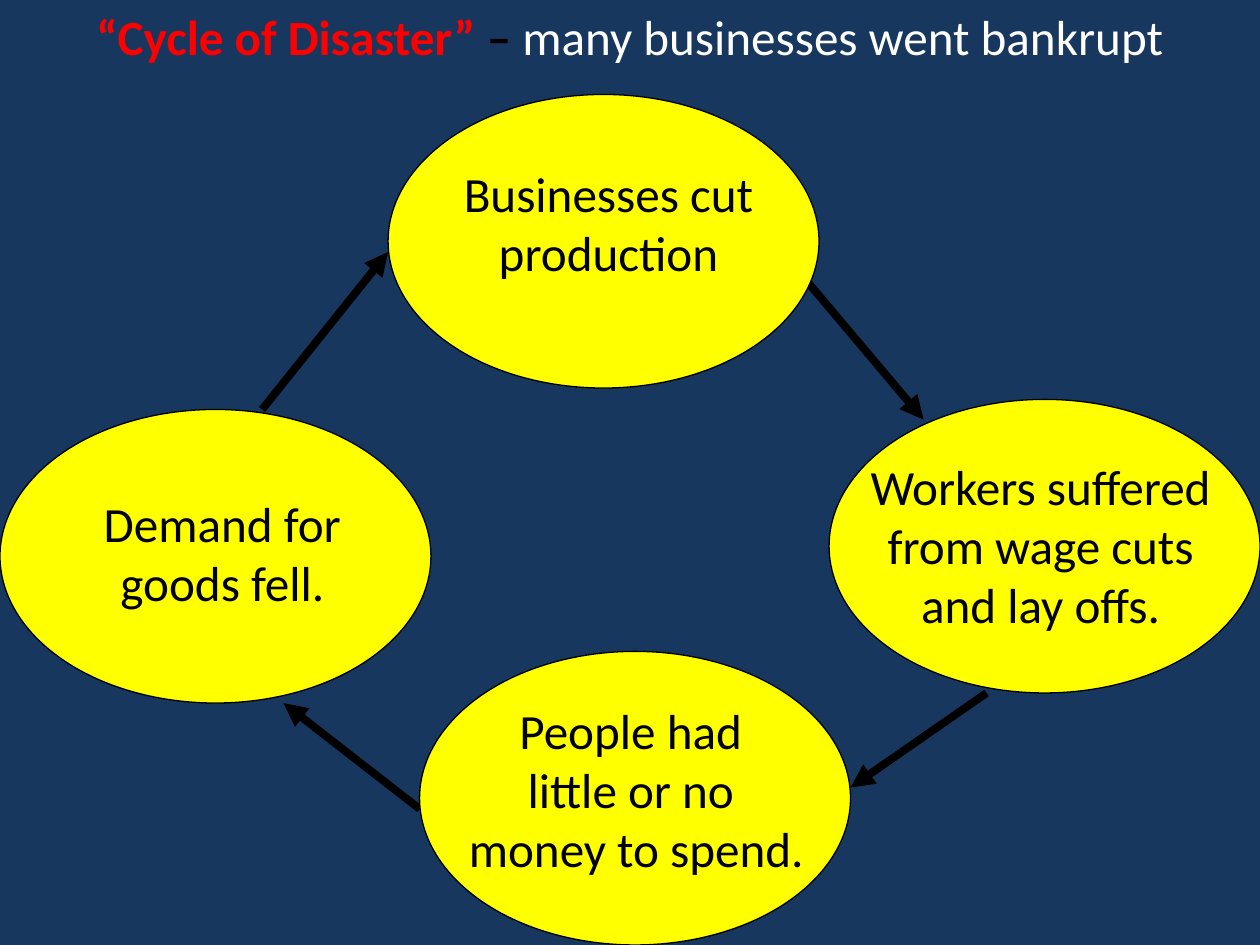
"""Builds a slide showing the cycle of business failure as four linked ovals."""
from pptx import Presentation
from pptx.dml.color import RGBColor
from pptx.enum.shapes import MSO_CONNECTOR as Connector, MSO_SHAPE as Shape
from pptx.enum.text import MSO_ANCHOR as Anchor, MSO_AUTO_SIZE as AutoSize, PP_ALIGN as Align
from pptx.oxml.ns import qn
from pptx.util import Inches, Pt
from lxml.etree import SubElement


def color(value):
    return RGBColor.from_string(value)


class CycleSlide:
    FONT, SIZE = "Calibri", 28.1
    NAVY, YELLOW, BLACK, RED, WHITE = "17375E", "FFFF00", "000000", "FF0000", "FFFFFF"
    OVAL_SIZE = (3.42, 2.33)

    def __init__(self, deck):
        self.slide = deck.slides.add_slide(deck.slide_layouts[5])
        self.slide.background.fill.solid()
        self.slide.background.fill.fore_color.rgb = color(self.NAVY)

    def style_run(self, run, ink, bold=False):
        run.font.name, run.font.size, run.font.bold = self.FONT, Pt(self.SIZE), bold
        run.font.color.rgb = color(ink)

    def style_frame(self, frame):
        frame.word_wrap = True
        frame.auto_size = AutoSize.NONE
        frame.vertical_anchor = Anchor.TOP
        for paragraph in frame.paragraphs:
            paragraph.alignment = Align.CENTER

    def title(self, parts):
        heading = self.slide.shapes.title
        heading.left, heading.top, heading.width, heading.height = map(Inches, (0, 0, 10, 0.57))
        self.style_frame(heading.text_frame)
        for wording, ink, bold in parts:
            run = heading.text_frame.paragraphs[0].add_run()
            run.text = wording
            self.style_run(run, ink, bold)

    def oval(self, left, top):
        stage = self.slide.shapes.add_shape(
            Shape.OVAL, *map(Inches, (left, top, *self.OVAL_SIZE)))
        stage.shadow.inherit = False
        stage.fill.solid()
        stage.fill.fore_color.rgb = color(self.YELLOW)
        stage.line.color.rgb = color(self.BLACK)
        stage.line.width = Pt(0.75)

    def arrow(self, start, end):
        link = self.slide.shapes.add_connector(
            Connector.STRAIGHT, *map(Inches, (*start, *end)))
        link.line.color.rgb = color(self.BLACK)
        link.line.width = Pt(4.5)
        SubElement(link.line._get_or_add_ln(), qn("a:tailEnd"), type="triangle")
        SubElement(link._element.spPr, qn("a:effectLst"))

    def caption(self, box, wording):
        frame = self.slide.shapes.add_textbox(*map(Inches, box)).text_frame
        frame.text = wording
        self.style_frame(frame)
        for paragraph in frame.paragraphs:
            for run in paragraph.runs:
                self.style_run(run, self.BLACK)


def main():
    deck = Presentation()
    deck.slide_width, deck.slide_height = Inches(10), Inches(7.5)
    cycle = CycleSlide(deck)
    cycle.title([
        ("“Cycle of Disaster” ", cycle.RED, True),
        ("– ", cycle.BLACK, True),
        ("many businesses went bankrupt", cycle.WHITE, False),
    ])

    workers, *other_stages = [(6.58, 3.17), (3.08, 0.75), (0, 3.25), (3.33, 5.17)]
    cycle.oval(*workers)
    for start, end in [
        ((6.42, 2.25), (7.33, 3.33)),
        ((7.83, 5.5), (6.75, 6.25)),
        ((3.33, 6.42), (2.25, 5.58)),
        ((2.08, 3.25), (3.08, 2)),
    ]:
        cycle.arrow(start, end)
    for position in other_stages:
        cycle.oval(*position)

    for box, wording in [
        ((3.58, 1.25, 2.5, 1.52), "Businesses cut \nproduction"),
        ((6.76, 3.57, 3, 1.99), "Workers suffered\nfrom wage cuts\nand lay offs."),
        ((3.59, 5.51, 2.92, 1.99), "People had \nlittle or no \nmoney to spend."),
        ((0.43, 3.87, 2.67, 1.05), "Demand for\ngoods fell."),
    ]:
        cycle.caption(box, wording)
    deck.save("out.pptx")


if __name__ == "__main__":
    main()
